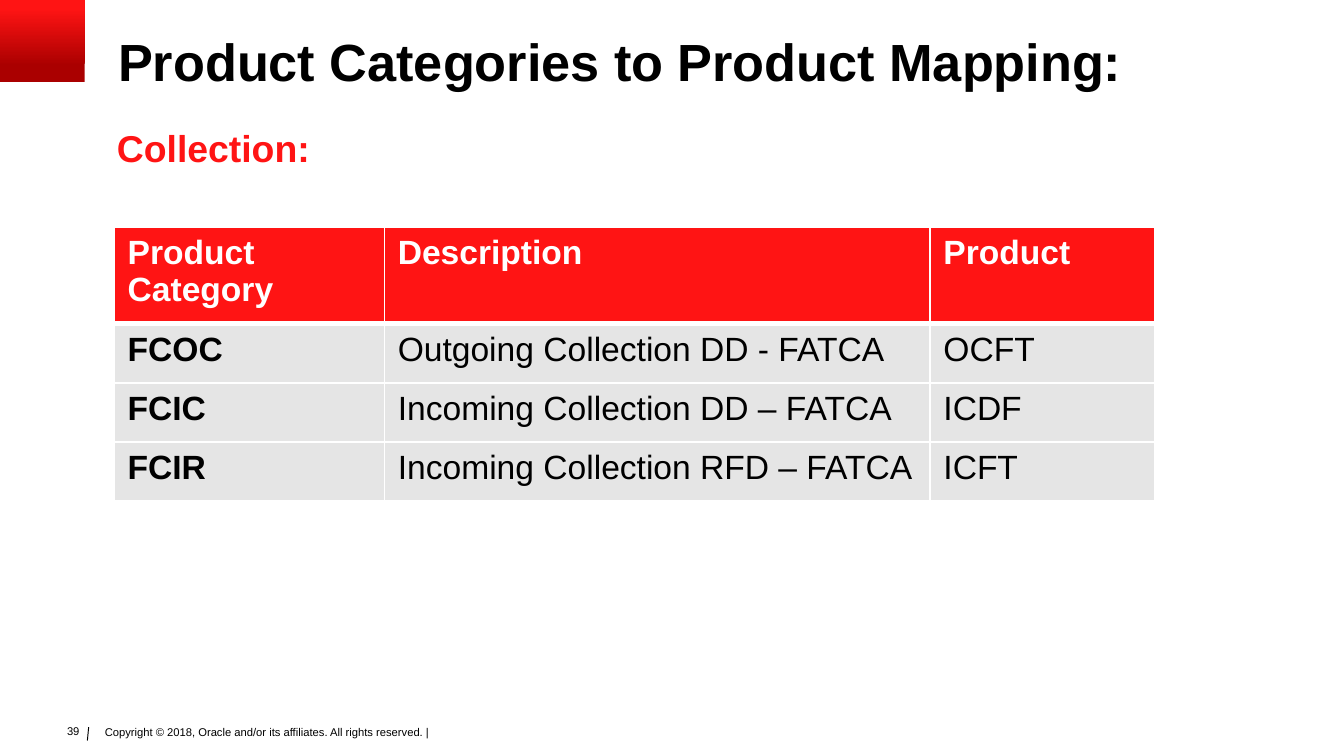
from lxml.etree import SubElement
from pptx import Presentation
from pptx.dml.color import RGBColor
from pptx.enum.shapes import MSO_CONNECTOR, MSO_SHAPE
from pptx.enum.text import PP_ALIGN
from pptx.oxml.ns import qn
from pptx.util import Inches, Pt

RED, DARK_RED, GREY = "FF1414", "AA0000", "E5E5E5"
BLACK, WHITE = "000000", "FFFFFF"

TITLE = "Product Categories to Product Mapping:"
SUBTITLE = "Collection:"
PAGE_NUMBER = "39"
COPYRIGHT = "Copyright © 2018, Oracle and/or its affiliates. All rights reserved. |"
ROWS = [
    ("Product Category", "Description", "Product"),
    ("FCOC", "Outgoing Collection DD - FATCA", "OCFT"),
    ("FCIC", "Incoming Collection DD – FATCA", "ICDF"),
    ("FCIR", "Incoming Collection RFD – FATCA", "ICFT"),
]
COLUMN_WIDTHS = [2.01, 4.06, 1.67]
ROW_HEIGHTS = [0.72, 0.44, 0.44, 0.44]


def color(value):
    return RGBColor.from_string(value)


def write_text(frame, text, size=18, fill=BLACK, bold=False, align=None, spacing=None):
    paragraph = frame.paragraphs[0]
    paragraph.alignment = align
    paragraph.line_spacing = spacing
    run = paragraph.add_run()
    run.text = text
    run.font.name = "Arial"
    run.font.size = Pt(size)
    run.font.bold = bold
    run.font.color.rgb = color(fill)


def add_text(slide, text, box, margins=(0, 0), wrap=True, **text_format):
    frame = slide.shapes.add_textbox(*map(Inches, box)).text_frame
    frame.word_wrap = wrap
    frame.margin_left = frame.margin_right = Inches(margins[0])
    frame.margin_top = frame.margin_bottom = Inches(margins[1])
    write_text(frame, text, **text_format)


def set_borders(cell, widths):
    properties = cell._tc.get_or_add_tcPr()
    for index, (side, width) in enumerate(widths.items()):
        line = properties.makeelement(qn(f"a:ln{side}"), {"w": str(Pt(width))})
        solid = SubElement(line, qn("a:solidFill"))
        SubElement(solid, qn("a:srgbClr"), val=WHITE)
        properties.insert(index, line)


def add_corner(slide):
    corner = slide.shapes.add_shape(
        MSO_SHAPE.RECTANGLE, 0, 0, Inches(0.63), Inches(0.61))
    corner.shadow.inherit = False
    corner.line.fill.background()
    corner.fill.gradient()
    corner.fill.gradient_angle = 90
    stops = [(0.2, DARK_RED), (0.9, RED)]
    for stop, (position, value) in zip(corner.fill.gradient_stops, stops):
        stop.position = position
        stop.color.rgb = color(value)


def add_footer(slide):
    add_text(slide, COPYRIGHT, (0.74, 5.38, 6.53, 0.24), (0.04, 0.02), size=6)
    divider = slide.shapes.add_connector(
        MSO_CONNECTOR.STRAIGHT, *map(Inches, (0.66, 5.41, 0.65, 5.51)))
    divider.line.color.rgb = color(BLACK)
    divider.line.width = Pt(0.5)
    SubElement(divider._element.spPr, qn("a:effectLst"))
    add_text(slide, PAGE_NUMBER, (0.39, 5.34, 0.3, 0.2), (0.1, 0.05),
             wrap=False, size=6, align=PP_ALIGN.RIGHT)


def add_mapping_table(slide):
    table = slide.shapes.add_table(
        len(ROWS), len(COLUMN_WIDTHS), Inches(0.85), Inches(1.69),
        Inches(sum(COLUMN_WIDTHS)), Inches(sum(ROW_HEIGHTS))).table
    for column, width in zip(table.columns, COLUMN_WIDTHS):
        column.width = Inches(width)
    for row, height in zip(table.rows, ROW_HEIGHTS):
        row.height = Inches(height)
    for row_index, values in enumerate(ROWS):
        header = row_index == 0
        for column_index, value in enumerate(values):
            cell = table.cell(row_index, column_index)
            cell.fill.solid()
            cell.fill.fore_color.rgb = color(RED if header else GREY)
            write_text(cell.text_frame, value, fill=WHITE if header else BLACK,
                       bold=header or column_index == 0)
            set_borders(cell, {"L": 1, "R": 1, "T": 3 if row_index == 1 else 1,
                               "B": 3 if header else 1})


def main():
    presentation = Presentation()
    presentation.slide_width = Inches(10)
    presentation.slide_height = presentation.slide_width * 9 // 16
    slide = presentation.slides.add_slide(presentation.slide_layouts[6])
    add_footer(slide)
    add_corner(slide)
    add_text(slide, TITLE, (0.88, 0.27, 9, 0.48), size=28, bold=True, spacing=0.9)
    add_mapping_table(slide)
    add_text(slide, SUBTITLE, (0.87, 0.93, 9, 0.33), size=20, fill=RED, bold=True)
    presentation.save("out.pptx")


if __name__ == "__main__":
    main()
